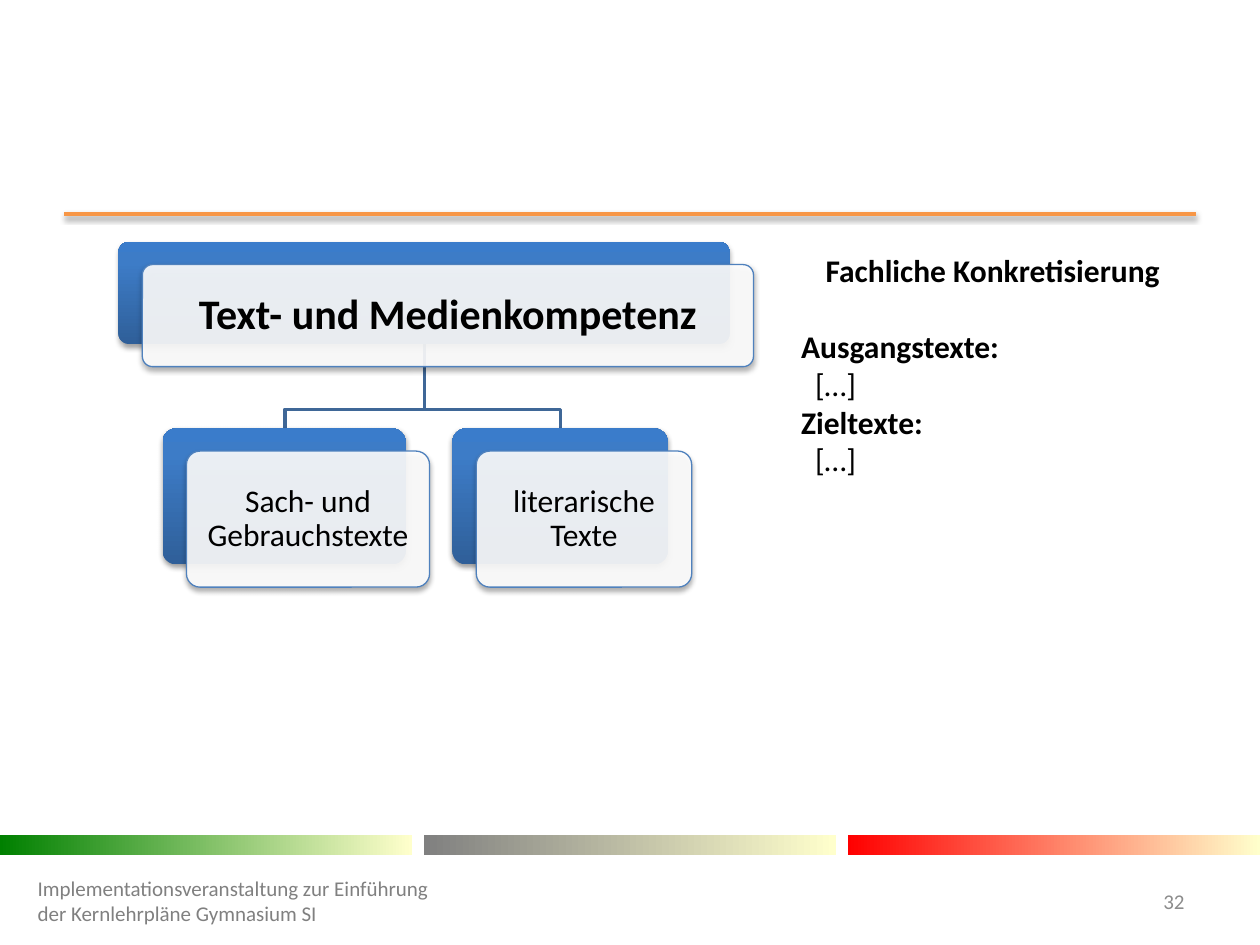
from dataclasses import dataclass
from lxml.etree import SubElement
from pptx import Presentation
from pptx.dml.color import RGBColor
from pptx.enum.shapes import MSO_CONNECTOR, MSO_SHAPE
from pptx.enum.text import MSO_ANCHOR, PP_ALIGN
from pptx.oxml.ns import qn
from pptx.util import Inches, Pt


@dataclass(frozen=True)
class Theme:
    font: str = "Calibri"
    head: int = 24
    body: int = 18
    small: int = 12
    ink: str = "000000"
    white: str = "FFFFFF"
    foot: str = "808080"
    page: str = "8C8C8C"
    rule: str = "F79646"
    branch: str = "3F6797"
    edge: str = "4F81BD"
    cream: str = "FFFFCC"
    bars: tuple = ("008000", "808080", "FF0000")
    blue: tuple = ((0, "2F5F99"), (80, "3D7CC7"), (100, "3A7CCB"))


LEFT, MID, RIGHT = PP_ALIGN.LEFT, PP_ALIGN.CENTER, PP_ALIGN.RIGHT
COLS, ROWS = 100, 75  # grid cells of 0.1 inch


def write(para, text, size, color, font, bold=False, align=LEFT,
          lines=1.0, before=0, indent=0):
    """Put formatted text into a paragraph."""
    para.alignment, para.line_spacing = align, lines
    if before:
        para.space_before = Pt(before)
    if indent:
        para._p.get_or_add_pPr().set("marL", str(Pt(indent)))
    run = para.add_run()
    run.text = text
    run.font.name, run.font.size, run.font.bold = font, Pt(size), bold
    run.font.color.rgb = RGBColor.from_string(color)


def tint(parent, color, alpha=None):
    node = SubElement(parent, qn("a:srgbClr"), val=color)
    if alpha is not None:
        SubElement(node, qn("a:alpha"), val=str(alpha * 1000))


def shade(props, alpha, dist):
    """Add a soft shadow that falls straight down."""
    box = props.find(qn("a:effectLst"))
    if box is None:
        box = SubElement(props, qn("a:effectLst"))
    drop = SubElement(box, qn("a:outerShdw"), blurRad=str(Pt(3.1)),
                      dist=str(Pt(dist)), dir="5400000", rotWithShape="0")
    tint(drop, "000000", alpha)


class Deck:
    def __init__(self, theme):
        self.theme = theme
        self.prs = Presentation()
        self.prs.slide_width, self.prs.slide_height = Inches(10), Inches(7.5)
        self.slide = self.prs.slides.add_slide(self.prs.slide_layouts[6])
        self.shapes = self.slide.shapes

    def x(self, cols):
        return round(self.prs.slide_width * cols / COLS)

    def y(self, rows):
        return round(self.prs.slide_height * rows / ROWS)

    def area(self, left, top, wide, high):
        return self.x(left), self.y(top), self.x(wide), self.y(high)

    def pen(self, line, color, width):
        line.color.rgb = RGBColor.from_string(color)
        line.width = Pt(width)

    def rule(self, left, right, row):
        line = self.shapes.add_connector(
            MSO_CONNECTOR.STRAIGHT, self.x(left), self.y(row), self.x(right), self.y(row))
        self.pen(line.line, self.theme.rule, 2)
        shade(line._element.spPr, 38, 1.6)

    def block(self, area, kind=MSO_SHAPE.RECTANGLE):
        shape = self.shapes.add_shape(kind, *self.area(*area))
        shape.shadow.inherit = False
        shape.line.fill.background()
        if kind == MSO_SHAPE.ROUNDED_RECTANGLE:
            shape.adjustments[0] = 0.1
        return shape

    def blend(self, shape, stops, angle):
        shape.fill.gradient()
        shape.fill.gradient_angle = angle
        group = shape._element.spPr.find(".//" + qn("a:gsLst"))
        group.clear()
        for pos, color in stops:
            tint(SubElement(group, qn("a:gs"), pos=str(pos * 1000)), color)

    def bar(self, area, color):
        self.blend(self.block(area), ((0, color), (100, self.theme.cream)), 0)

    def branch(self, start, end, bend):
        (left, top), (right, low) = start, end
        path = self.shapes.build_freeform(self.x(left), self.y(top))
        path.add_line_segments(
            [(self.x(c), self.y(r)) for c, r in ((left, bend), (right, bend), end)],
            close=False)
        shape = path.convert_to_shape()
        shape.shadow.inherit = False
        shape.fill.background()
        self.pen(shape.line, self.theme.branch, 2)

    def card(self, area, text, size, bold=False, depth=1.6, pad=0.1):
        left, top, wide, high = area
        kind = MSO_SHAPE.ROUNDED_RECTANGLE
        back = self.block(area, kind)
        self.blend(back, self.theme.blue, 90)
        shade(back._element.spPr, 38, depth)
        # The pale face sits a little lower and to the right
        face = self.block((left + 1.9, top + 1.8, wide, high), kind)
        face.fill.solid()
        face.fill.fore_color.rgb = RGBColor.from_string(self.theme.white)
        color = face._element.spPr.find(qn("a:solidFill"))[0]
        SubElement(color, qn("a:alpha"), val="90000")
        self.pen(face.line, self.theme.edge, 0.75)
        shade(face._element.spPr, 35, 1.8)
        self.fill(face.text_frame, [(text, dict(size=size, bold=bold, align=MID, lines=0.9))],
                  MSO_ANCHOR.MIDDLE, pad)

    def fill(self, frame, items, anchor, pad=None):
        frame.word_wrap, frame.vertical_anchor = True, anchor
        if pad is not None:
            frame.margin_left = frame.margin_right = Inches(pad)
            frame.margin_top = frame.margin_bottom = Inches(pad)
        for pos, (text, style) in enumerate(items):
            para = frame.add_paragraph() if pos else frame.paragraphs[0]
            write(para, text, **(dict(color=self.theme.ink, font=self.theme.font) | style))

    def text(self, area, items, anchor=MSO_ANCHOR.TOP):
        self.fill(self.shapes.add_textbox(*self.area(*area)).text_frame, items, anchor)


def main():
    theme = Theme()
    deck = Deck(theme)

    # Frame: rule on top, three colour bars below
    deck.rule(5.1, 94.9, 17)
    wide = 32.7
    for pos, color in enumerate(theme.bars):
        deck.bar((pos * (COLS - wide) / 2, 66.3, wide, 1.6), color)

    # Tree: branches first, cards over them
    for end in (44.5, 22.6):
        deck.branch((33.7, 27.2), (end, 34), 32.5)
    deck.card((9.4, 19.2, 48.5, 8.1), "Text- und Medienkompetenz", theme.head,
              bold=True, depth=1.8, pad=0.12)
    for left, span, name in ((12.9, 19.3, "Sach- und Gebrauchstexte"),
                             (35.9, 17.1, "literarische Texte")):
        deck.card((left, 34, span, 10.8), name, theme.body)

    # Notes on the right
    plain = dict(size=theme.body)
    strong = plain | dict(bold=True)
    inset = plain | dict(indent=8)
    deck.text((62.6, 19.4, 32.4, 19.2), [
        ("Fachliche Konkretisierung", strong | dict(align=MID)),
        ("Ausgangstexte:", strong | dict(before=22)),
        ("[…]", inset),
        ("Zieltexte:", strong),
        ("[…]", inset)])

    # Footer
    for area, text, color, align in (
            ((2, 69.5, 33.9, 4), "Implementationsveranstaltung zur Einführung "
             "der Kernlehrpläne Gymnasium SI", theme.foot, LEFT),
            ((88.6, 69.5, 6.4, 4), "32", theme.page, RIGHT)):
        deck.text(area, [(text, dict(size=theme.small, color=color, align=align))],
                  MSO_ANCHOR.MIDDLE)

    deck.prs.save("out.pptx")


if __name__ == "__main__":
    main()
